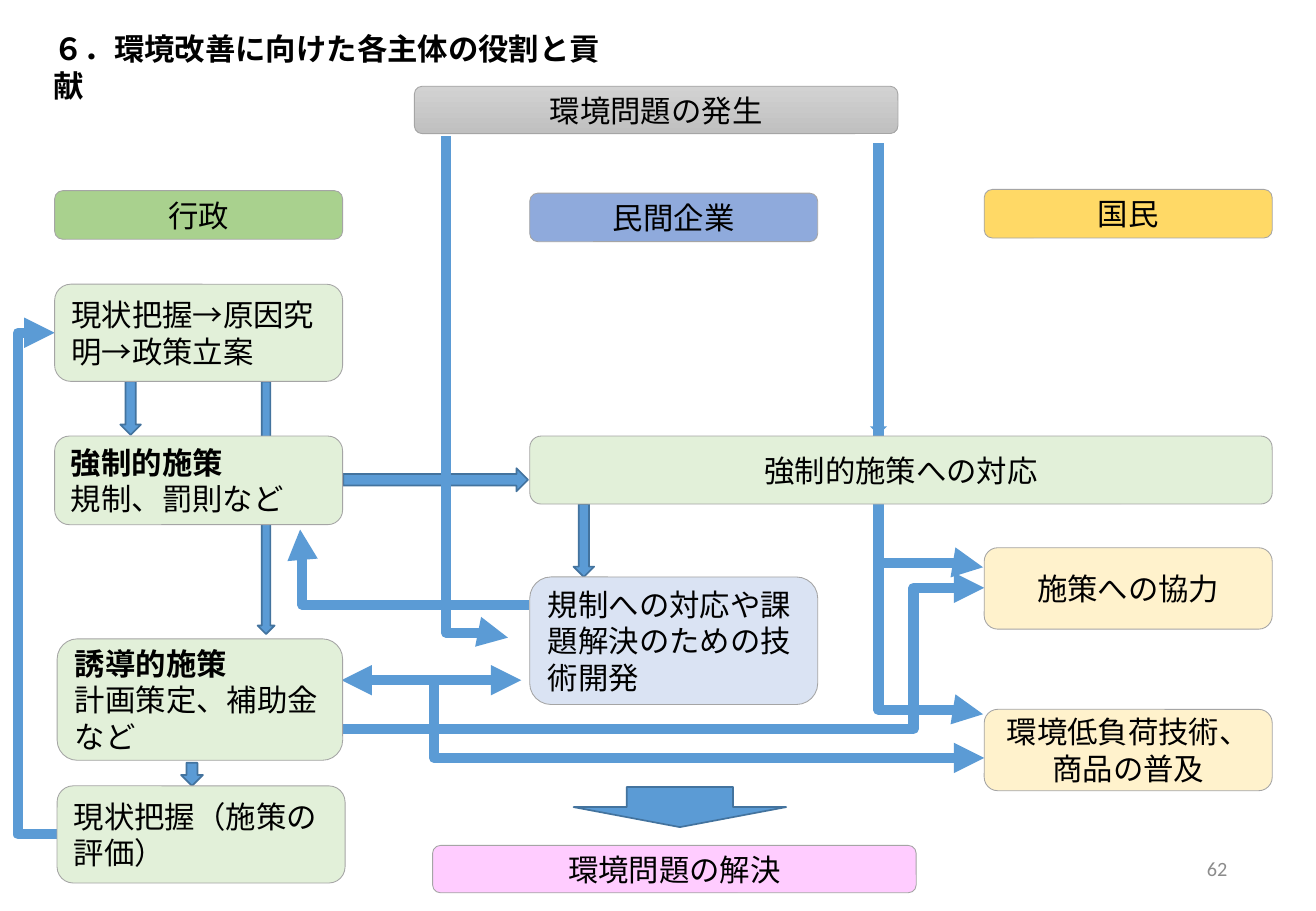
from pptx import Presentation
from pptx import util as u
from pptx.dml.color import RGBColor
from pptx.enum import lang, shapes, text
from pptx.oxml import ns
from lxml import etree

LEFT, CENTER, RIGHT = text.PP_ALIGN.LEFT, text.PP_ALIGN.CENTER, text.PP_ALIGN.RIGHT
BLUE, BLUE_EDGE, GREY_EDGE = "5B9BD5", "43739E", "A5A5A5"
MINT, CREAM = "E2F0D9", "FFF2CC"
COL_1, COL_2, COL_3, COL_W = 0.45, 4.36, 8.1, 2.37

# Captions: left, top, width, height, text, size, colour, bold, alignment, anchor
CAPTIONS = [
    (0.34, 0.2, 4.75, 0.4, "６．環境改善に向けた各主体の役割と貢献", 18, "000000",
     True, LEFT, text.MSO_ANCHOR.TOP),
    (7.76, 6.95, 2.44, 0.4, "62", 12, "8C8C8C", False, RIGHT, text.MSO_ANCHOR.MIDDLE),
]

# Boxes: left, top, width, height, fill (two colours make a gradient), alignment, lines
BOXES = [
    (3.41, 0.71, 3.98, 0.39, ("D2D2D2", "C0C0C0"), CENTER, ["環境問題の発生"]),
    (COL_1, 1.57, COL_W, 0.4, "A9D18E", CENTER, ["行政"]),
    (COL_2, 1.59, COL_W, 0.4, "8FAADC", CENTER, ["民間企業"]),
    (COL_3, 1.56, COL_W, 0.4, "FFD966", CENTER, ["国民"]),
    (COL_1, 2.34, COL_W, 0.8, MINT, LEFT, ["現状把握→原因究明→政策立案"]),
    (COL_1, 3.59, COL_W, 0.73, MINT, LEFT, ["強制的施策", "規制、罰則など"]),
    (0.47, 5.26, 2.35, 1, MINT, LEFT, ["誘導的施策", "計画策定、補助金など"]),
    (0.47, 6.47, COL_W, 0.8, MINT, LEFT, ["現状把握（施策の評価）"]),
    (COL_2, 4.75, COL_W, 1.05, "DAE3F3", LEFT,
     ["規制への対応や課題解決のための技術開発"]),
    (COL_3, 4.51, COL_W, 0.67, CREAM, CENTER, ["施策への協力"]),
    (COL_3, 5.84, COL_W, 0.67, CREAM, CENTER, ["環境低負荷技術、商品の普及"]),
    (COL_2, 3.59, 6.11, 0.56, MINT, CENTER, ["強制的施策への対応"]),
    (3.56, 6.96, 3.98, 0.39, "FFCCFF", CENTER, ["環境問題の解決"]),
]

# Block arrows: left, top, width, height, rotation, edge colour
BLOCK_ARROWS = [
    (0.99, 3.14, 0.17, 0.44, 0, BLUE_EDGE),
    (2.12, 3.14, 0.14, 2.08, 0, BLUE_EDGE),
    (3.49, 3.19, 0.19, 1.52, 270, BLUE_EDGE),
    (4.72, 4.15, 0.17, 0.6, 0, BLUE_EDGE),
    (4.72, 6.48, 1.75, 0.33, 0, BLUE_EDGE),
    (1.49, 6.28, 0.18, 0.19, 0, BLUE_EDGE),
    (7.16, 1.28, 0.14, 2.3, 0, None),
]

# Routes: start, end, bend as a share of the run (None is straight), starts downwards
ROUTES = [
    ((3.67, 1.12), (4.18, 5.25), 0.99, True),
    ((4.35, 4.98), (2.47, 4.36), 0.99, False),
    ((2.81, 6), (8.1, 4.84), 0.89, False),
    ((2.81, 5.6), (4.29, 5.6), None, False),
    ((3.55, 5.64), (8.1, 6.24), 0.005, False),
    ((0.47, 6.87), (0.45, 2.74), 16.03, False),
    ((7.23, 1.18), (8.09, 4.67), 0.99, True),
    ((7.23, 2.4), (8.09, 5.88), 0.99, True),
]


def rgb(value):
    return RGBColor.from_string(value)


def inches(*values):
    return [u.Inches(value) for value in values]


def paint(shape, fill, edge, width):
    shape.shadow.inherit = False
    if isinstance(fill, tuple):
        shape.fill.gradient()
        shape.fill.gradient_angle = 270
        for stop, value in zip(shape.fill.gradient_stops, fill):
            stop.color.rgb = rgb(value)
    else:
        shape.fill.solid()
        shape.fill.fore_color.rgb = rgb(fill)
    if edge:
        shape.line.color.rgb = rgb(edge)
        shape.line.width = u.Pt(width)
    else:
        shape.line.fill.background()


def write(shape, lines, size, color, bold_first, align, anchor):
    frame = shape.text_frame
    frame.word_wrap = True
    frame.vertical_anchor = anchor
    for index, line in enumerate(lines):
        para = frame.paragraphs[0] if index == 0 else frame.add_paragraph()
        para.alignment = align
        span = para.add_run()
        span.text = line
        span.font.name = "Calibri"
        span.font.size = u.Pt(size)
        span.font.bold = bold_first and index == 0
        span.font.color.rgb = rgb(color)
        span.font.language_id = lang.MSO_LANGUAGE_ID.JAPANESE


def add_route(page, start, end, bend, downwards):
    (x1, y1), (x2, y2) = start, end
    if downwards:  # turned frame: width and height swap about the centre
        mid_x, mid_y = (x1 + x2) / 2, (y1 + y2) / 2
        half_run, half_rise = (y2 - y1) / 2, (x2 - x1) / 2
        x1, x2 = mid_x + half_run, mid_x - half_run
        y1, y2 = mid_y - half_rise, mid_y + half_rise
    kind = shapes.MSO_CONNECTOR.STRAIGHT if bend is None else shapes.MSO_CONNECTOR.ELBOW
    route = page.shapes.add_connector(kind, *inches(x1, y1, x2, y2))
    route.line.color.rgb = rgb(BLUE)
    route.line.width = u.Pt(6)
    props = route._element.spPr
    if downwards:
        props.find(ns.qn("a:xfrm")).set("rot", str(270 * 60000))
    if bend is not None:
        guides = props.find(ns.qn("a:prstGeom")).get_or_add_avLst()
        etree.SubElement(guides, ns.qn("a:gd"), name="adj1",
                         fmla=f"val {round(bend * 100000)}")
    line = props.find(ns.qn("a:ln"))
    for tag in ("a:headEnd", "a:tailEnd") if bend is None else ("a:tailEnd",):
        etree.SubElement(line, ns.qn(tag), type="triangle")
    etree.SubElement(props, ns.qn("a:effectLst"))


def main():
    deck = Presentation()
    deck.slide_width, deck.slide_height = inches(10.83, 7.5)
    page = deck.slides.add_slide(deck.slide_layouts[6])

    # Title and page number
    for left, top, width, height, caption, *style in CAPTIONS:
        box = page.shapes.add_textbox(*inches(left, top, width, height))
        write(box, [caption], *style)

    # Flow arrows lie behind the boxes
    for left, top, width, height, turn, edge in BLOCK_ARROWS:
        arrow = page.shapes.add_shape(shapes.MSO_SHAPE.DOWN_ARROW,
                                      *inches(left, top, width, height))
        arrow.rotation = turn
        paint(arrow, BLUE, edge, 1)
    for route in ROUTES:
        add_route(page, *route)

    # Boxes: the first of two lines is a bold heading
    for left, top, width, height, fill, align, lines in BOXES:
        box = page.shapes.add_shape(shapes.MSO_SHAPE.ROUNDED_RECTANGLE,
                                    *inches(left, top, width, height))
        paint(box, fill, GREY_EDGE, 0.5)
        write(box, lines, 18, "000000", len(lines) > 1, align, text.MSO_ANCHOR.MIDDLE)

    deck.save("out.pptx")


if __name__ == "__main__":
    main()
